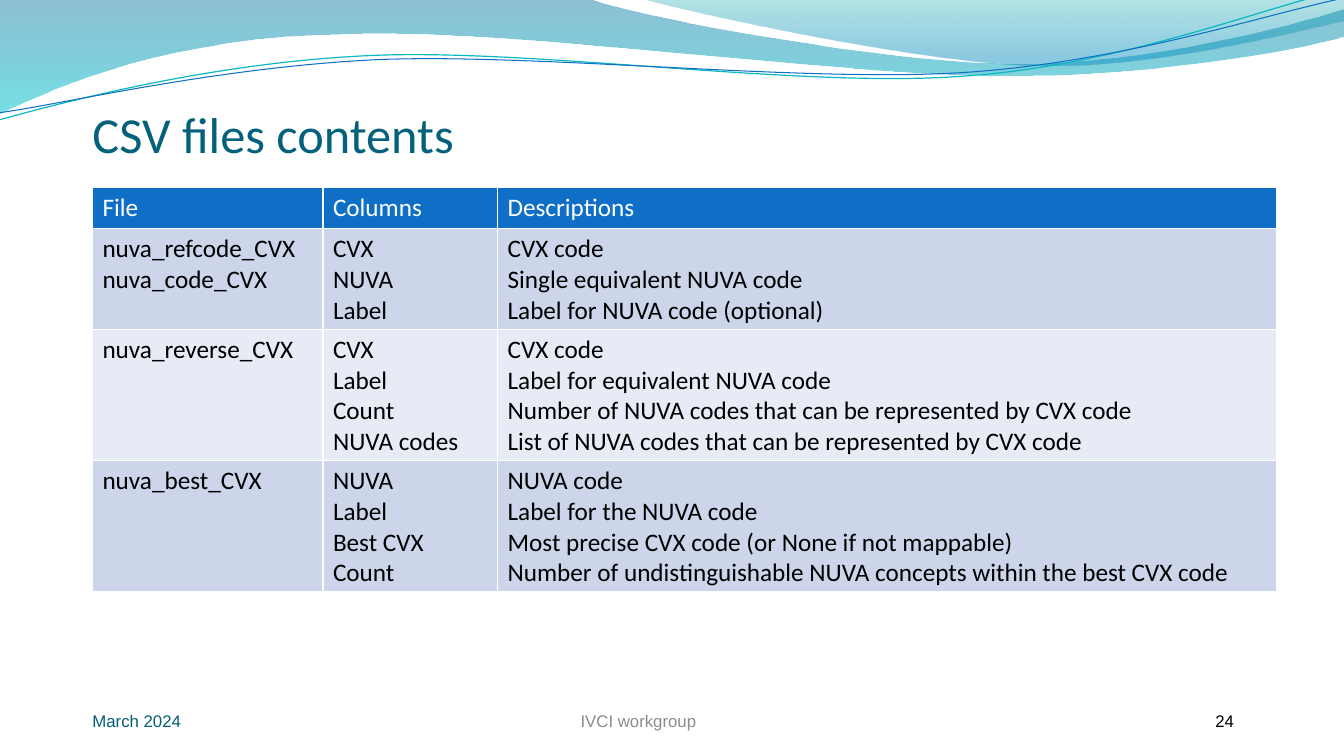
from dataclasses import dataclass

from lxml import etree
from pptx import Presentation
from pptx.dml.color import RGBColor
from pptx.enum import text as t
from pptx.oxml.ns import qn
from pptx.util import Cm, Pt


@dataclass(frozen=True)
class Theme:
    sans: str = "Calibri"
    foot: str = "Arial"
    title: str = "04617B"
    date: str = "045D75"
    grey: str = "8C8C8C"
    ink: str = "000000"
    white: str = "FFFFFF"
    blue: str = "0F6FC6"
    teal: str = "0AB8BF"
    bands: tuple = ("CCD5EA", "E7EBF5")
    big: int = 36
    body: int = 18
    small: int = 12


THEME = Theme()
LEFT, WIDE = 2.33, 29.85
FOOT_TOP, FOOT_HIGH = 17.65, 1.02

# Outlines in cm: a pair is a straight step, six numbers are a cubic curve.
# Each wave: outline, gradient stops (position, colour, opacity in percent).
WAVES = [
    ([(-0.02, 0), (14.91, -0.02), (16.1, 0.43, 22.48, 1.6, 25.68, 1.6),
      (28.91, 1.6, 32.46, 0.66, 33.86, 0.23), (33.91, 0.91),
      (33.3, 1.12, 29.46, 1.93, 25.25, 1.91),
      (21.06, 1.91, 12.93, 0.71, 8.71, 0.86),
      (4.37, 0.91, 1.55, 2.11, -0.02, 2.87)],
     [(0, "0074A1", 45), (1, "00C6CF", 55)]),
    ([(16.23, -0.02), (17.25, 0.28, 23.09, 1.57, 26.04, 1.65),
      (28.98, 1.75, 32.56, 0.81, 33.86, 0.53), (33.86, 0)],
     [(0, "00A1A9", 30), (0.8, "008BBF", 45)]),
]
LINES = [
    ([(-0.02, 3.02), (1.63, 2.57, 5.36, 1.57, 9.37, 1.4),
      (13.39, 1.22, 20.07, 2.21, 24.13, 1.93),
      (28.19, 1.68, 31.8, 0.2, 33.81, -0.25)], THEME.teal, 0.85),
    ([(0, 2.84), (1.6, 2.62, 5.54, 1.68, 9.6, 1.5),
      (13.64, 1.35, 20.22, 2.08, 24.26, 1.83),
      (28.32, 1.57, 31.88, 0.36, 33.88, -0.05)], THEME.blue, 0.75),
]

COLS = [5.81, 4.4, 19.64]
ROW_HIGH = 1.03
ROWS = [
    ("File", "Columns", "Descriptions"),
    ("nuva_refcode_CVX\nnuva_code_CVX",
     "CVX\nNUVA\nLabel",
     "CVX code\nSingle equivalent NUVA code\nLabel for NUVA code (optional)"),
    ("nuva_reverse_CVX",
     "CVX\nLabel\nCount\nNUVA codes",
     "CVX code\nLabel for equivalent NUVA code\n"
     "Number of NUVA codes that can be represented by CVX code\n"
     "List of NUVA codes that can be represented by CVX code"),
    ("nuva_best_CVX",
     "NUVA\nLabel\nBest CVX\nCount",
     "NUVA code\nLabel for the NUVA code\n"
     "Most precise CVX code (or None if not mappable)\n"
     "Number of undistinguishable NUVA concepts within the best CVX code"),
]


def rgb(code):
    return RGBColor.from_string(code)


def write(frame, words, size=THEME.body, font=THEME.sans, color=THEME.ink,
          align=t.PP_ALIGN.LEFT):
    para = frame.paragraphs[0]
    para.text = words
    para.alignment = align
    for run in para.runs:
        run.font.size = Pt(size)
        run.font.name = font
        run.font.bold = False
        run.font.color.rgb = rgb(color)


def label(slide, words, box, anchor=t.MSO_ANCHOR.MIDDLE, inset=0, **form):
    frame = slide.shapes.add_textbox(*map(Cm, box)).text_frame
    frame.word_wrap = True
    frame.vertical_anchor = anchor
    frame.margin_left = Cm(inset)
    frame.margin_right = frame.margin_top = frame.margin_bottom = 0
    write(frame, words, **form)


def outline(slide, steps, close):
    """Draw all points with straight steps, then join each curve's three."""
    first, *rest = [(Cm(x), Cm(y)) for step in steps
                    for x, y in zip(step[::2], step[1::2])]
    build = slide.shapes.build_freeform(*first)
    build.add_line_segments(rest, close=close)
    shape = build.convert_to_shape()
    shape.shadow.inherit = False
    nodes = iter(list(shape._element.spPr.iter(qn("a:lnTo"))))
    for step in steps[1:]:
        node = next(nodes)
        if len(step) == 6:
            node.tag = qn("a:cubicBezTo")
            for _ in range(2):
                extra = next(nodes)
                extra.getparent().remove(extra)
                node.append(extra[0])
    return shape


def wave(slide, steps, stops):
    shape = outline(slide, steps, True)
    shape.line.fill.background()
    shape.fill.gradient()
    shape.fill.gradient_angle = 270
    nodes = shape._element.spPr.iter(qn("a:gs"))
    for stop, node, (place, color, alpha) in zip(
            shape.fill.gradient_stops, nodes, stops):
        stop.position = place
        stop.color.rgb = rgb(color)
        etree.SubElement(node[0], qn("a:alpha"), val=str(alpha * 1000))


def curve(slide, steps, color, width):
    shape = outline(slide, steps, False)
    shape.fill.background()
    shape.line.color.rgb = rgb(color)
    shape.line.width = Pt(width)


def grid(slide, rows, left, top):
    """Fill the table; rows grow to fit their lines."""
    frame = slide.shapes.add_table(len(rows), len(COLS), Cm(left), Cm(top),
                                   Cm(sum(COLS)), Cm(ROW_HIGH * len(rows)))
    table = frame.table
    for col, width in zip(table.columns, COLS):
        col.width = Cm(width)
    for r, row in enumerate(rows):
        back = THEME.bands[(r - 1) % 2] if r else THEME.blue
        ink = THEME.ink if r else THEME.white
        for c, words in enumerate(row):
            cell = table.cell(r, c)
            cell.fill.solid()
            cell.fill.fore_color.rgb = rgb(back)
            write(cell.text_frame, words, color=ink)


def footer(slide, words, left, width, **form):
    label(slide, words, (left, FOOT_TOP, width, FOOT_HIGH),
          size=THEME.small, font=THEME.foot, **form)


def main():
    deck = Presentation()
    deck.slide_width, deck.slide_height = Cm(33.87), Cm(19.05)
    slide = deck.slides.add_slide(deck.slide_layouts[6])
    for steps, stops in WAVES:
        wave(slide, steps, stops)
    for steps, color, width in LINES:
        curve(slide, steps, color, width)
    label(slide, "CSV files contents", (LEFT, 1.96, WIDE, 2.16),
          anchor=t.MSO_ANCHOR.BOTTOM, size=THEME.big, color=THEME.title)
    grid(slide, ROWS, LEFT, 4.73)
    footer(slide, "March 2024", LEFT, 7.62, color=THEME.date)
    footer(slide, "IVCI workgroup", 9.88, 12.42, color=THEME.grey,
           align=t.PP_ALIGN.CENTER)
    footer(slide, "24", 29.36, 2.82, inset=1.27)
    deck.save("out.pptx")


if __name__ == "__main__":
    main()
